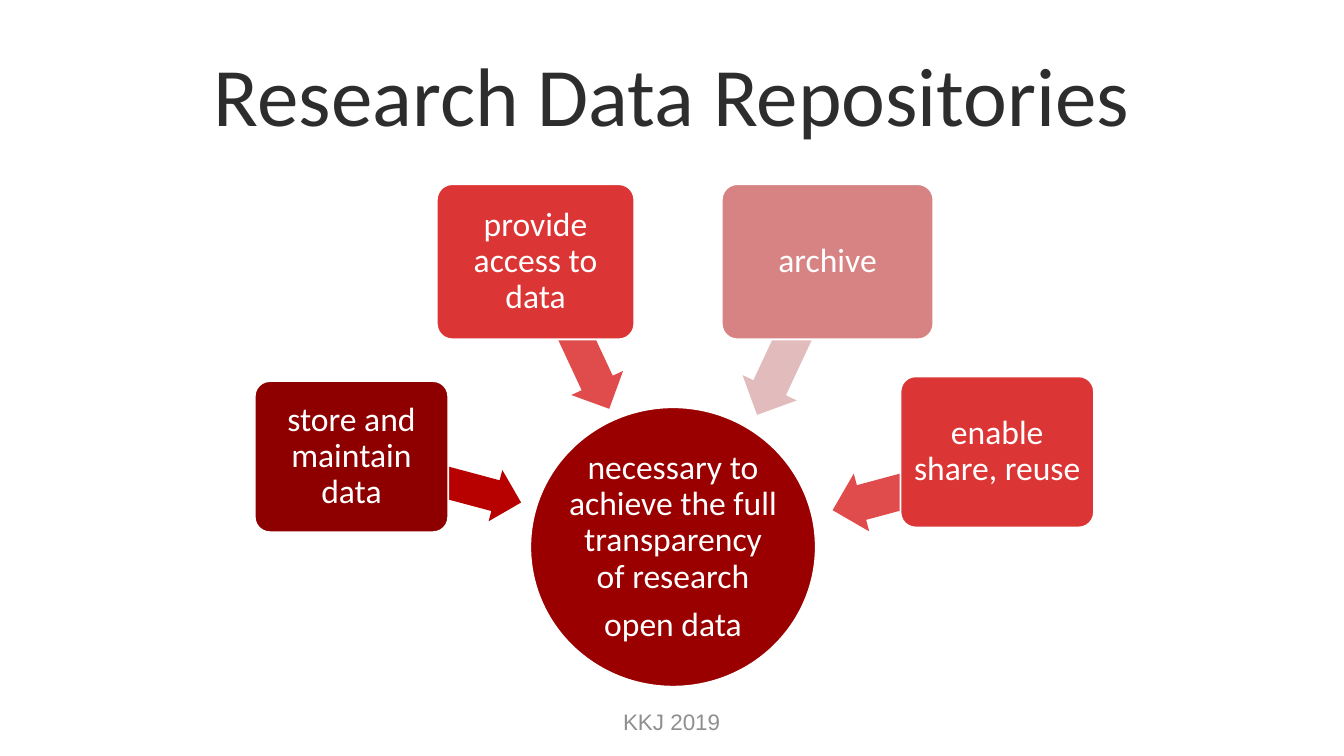
import pptx
import pptx.util
from lxml import etree
from pptx.dml.color import RGBColor
from pptx.enum.shapes import MSO_SHAPE
from pptx.enum.text import MSO_ANCHOR, PP_ALIGN
from pptx.util import Inches, Pt

COLORS = {
    "title": "2D2D2D",
    "footer": "8F8F8F",
    "white": "FFFFFF",
    "goal": "9A0000",
    "dark": "8E0000",
    "dark_arrow": "B70000",
    "red": "DC3535",
    "red_arrow": "E04B4B",
    "pale": "D78383",
    "pale_arrow": "E2BCBC",
}

ROLES = [
    ("store and maintain data", (3.79, 5.67, 2.88, 2.25), "dark",
     (5.68, 6.81, 2.11, 0.79), 195),
    ("provide access to data", (6.5, 2.74, 2.94, 2.31), "red",
     (7.53, 4.68, 2.16, 0.85), 245),
    ("archive", (10.74, 2.74, 3.15, 2.31), "pale",
     (10.61, 4.7, 2.27, 0.89), 295),
    ("enable share, reuse", (13.4, 5.6, 2.88, 2.25), "red",
     (12.35, 6.84, 2.38, 0.89), 345),
]


def rgb(name):
    return RGBColor.from_string(COLORS[name])


def write_text(shape, lines, size, color, margins, font="Calibri"):
    frame = shape.text_frame
    frame.word_wrap = True
    frame.vertical_anchor = MSO_ANCHOR.MIDDLE
    frame.margin_left = frame.margin_right = Inches(margins[0])
    frame.margin_top = frame.margin_bottom = Inches(margins[1])
    frame.text = "\n".join(lines)
    for paragraph in frame.paragraphs:
        paragraph.alignment = PP_ALIGN.CENTER
        paragraph.font.size = Pt(size)
        paragraph.font.name = font
        paragraph.font.color.rgb = rgb(color)


def add_filled(slide, preset, box, color):
    shape = slide.shapes.add_shape(preset, *map(Inches, box))
    shape.shadow.inherit = False
    shape.fill.solid()
    shape.fill.fore_color.rgb = rgb(color)
    shape.line.fill.background()
    return shape


def add_node(slide, preset, box, color, lines, margins):
    node = add_filled(slide, preset, box, color)
    node.line.color.rgb = rgb("white")
    node.line.width = Pt(2)
    write_text(node, lines, 36, "white", margins)
    for paragraph in node.text_frame.paragraphs:
        paragraph.line_spacing = 0.9
        paragraph.space_after = Pt(12.6)
    return node


def add_role(slide, label, box, color, arrow_box, angle):
    arrow = add_filled(slide, MSO_SHAPE.LEFT_ARROW, arrow_box, color + "_arrow")
    arrow.adjustments[0] = 0.6
    arrow.rotation = angle
    card = add_node(slide, MSO_SHAPE.ROUNDED_RECTANGLE, box, color, [label], (0.12, 0.12))
    card.adjustments[0] = 0.1


def add_title(slide):
    title = slide.shapes.title
    title.left, title.top = Inches(1), Inches(0.45)
    title.width, title.height = Inches(18), Inches(1.88)
    write_text(title, ["Research Data Repositories"], 89, "title", (0.2, 0.1))


def add_footer(slide):
    footer = slide.shapes.add_textbox(*map(Inches, (6.83, 10.43, 6.33, 0.6)))
    write_text(footer, ["KKJ 2019"], 24, "footer", (0.2, 0.1), "Arial")


def main():
    deck = pptx.Presentation()
    deck.slide_width, deck.slide_height = Inches(20), Inches(11.25)
    slide = deck.slides.add_slide(deck.slide_layouts[5])
    add_title(slide)
    add_footer(slide)
    add_node(slide, MSO_SHAPE.OVAL, (7.89, 6.06, 4.25, 4.16), "goal",
             ["necessary to achieve the full transparency of research", "open data"],
             (-0.08, 0))
    for role in ROLES:
        add_role(slide, *role)
    deck.save("out.pptx")


if __name__ == "__main__":
    main()
